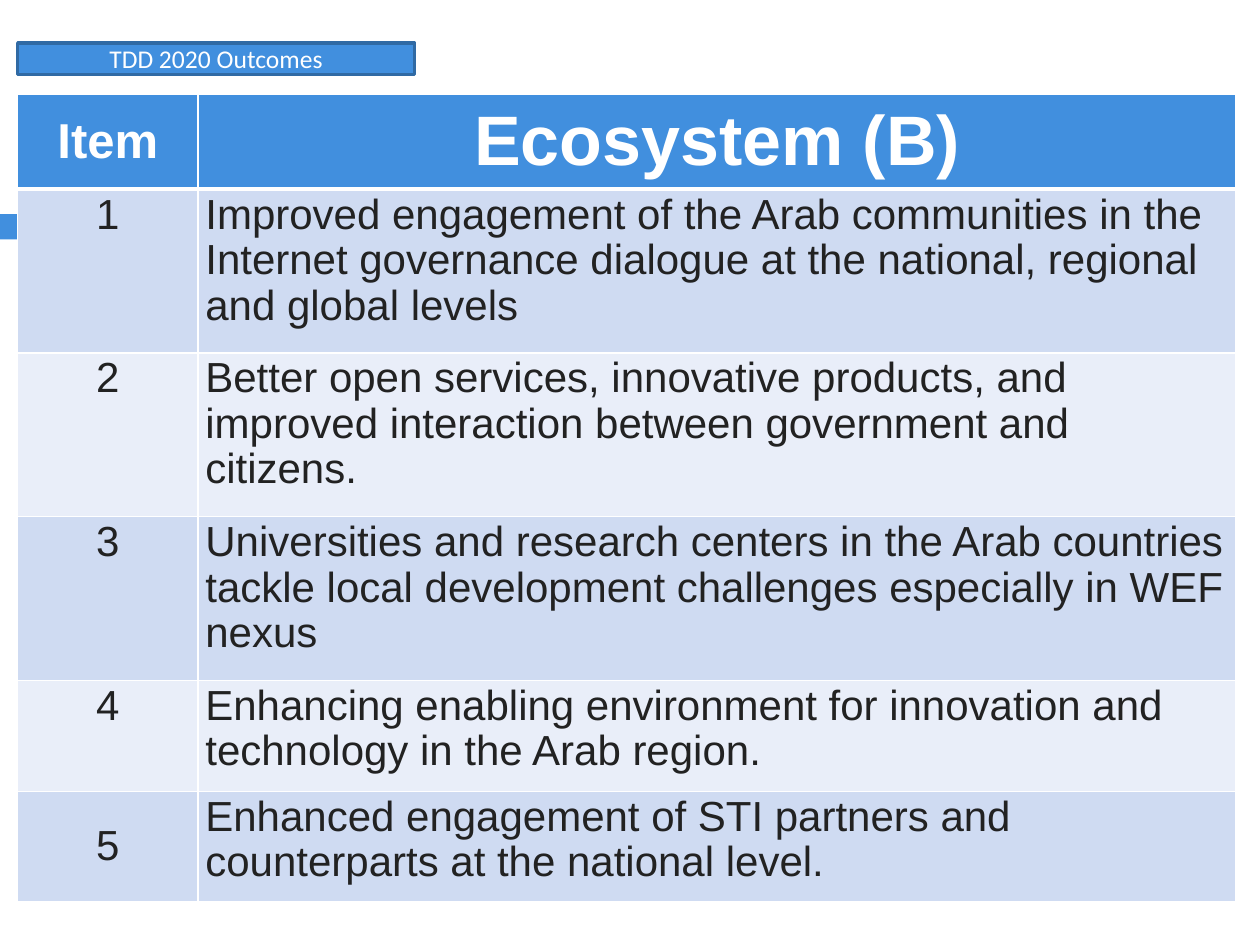
from lxml import etree
from pptx import Presentation
from pptx.dml.color import RGBColor
from pptx.enum.shapes import MSO_SHAPE
from pptx.enum.text import MSO_ANCHOR, PP_ALIGN
from pptx.oxml.ns import qn
from pptx.util import Inches, Pt

RECTANGLE = MSO_SHAPE.RECTANGLE
CENTER, LEFT = PP_ALIGN.CENTER, PP_ALIGN.LEFT
MIDDLE, TOP = MSO_ANCHOR.MIDDLE, MSO_ANCHOR.TOP

BLUE, WHITE, INK = "418FDE", "FFFFFF", "222222"
BANDS = ["CFDBF2", "E9EEF9"]
COLUMN_WIDTHS = [1.43, 8.24]
ROW_HEIGHTS = [0.75, 1.3, 1.3, 1.3, 0.88, 0.88]
OUTCOMES = [
    "Improved engagement of the Arab communities in the Internet governance "
    "dialogue at the national, regional and global levels",
    "Better open services, innovative products, and improved interaction "
    "between government and citizens.",
    "Universities and research centers in the Arab countries tackle local "
    "development challenges especially in WEF nexus",
    "Enhancing enabling environment for innovation and technology in the Arab region.",
    "Enhanced engagement of STI partners and counterparts at the national level.",
]


def paint(color_format, color):
    color_format.rgb = RGBColor.from_string(color)


def add_borders(cell, bottom_width):
    """Give a cell white borders; they must precede its fill in the XML."""
    properties = cell._tc.get_or_add_tcPr()
    widths = {"a:lnL": 1, "a:lnR": 1, "a:lnT": 1, "a:lnB": bottom_width}
    for position, (tag, width) in enumerate(widths.items()):
        line = etree.Element(qn(tag), w=str(Pt(width)))
        fill = etree.SubElement(line, qn("a:solidFill"))
        etree.SubElement(fill, qn("a:srgbClr"), val=WHITE)
        properties.insert(position, line)


deck = Presentation()
deck.slide_width, deck.slide_height = Inches(10), Inches(7.5)
page = deck.slides.add_slide(deck.slide_layouts[6])

# Accent bar and title box
accent_bar = page.shapes.add_shape(
    RECTANGLE, Inches(0), Inches(1.7), Inches(8.23), Inches(0.2))
title_box = page.shapes.add_shape(
    RECTANGLE, Inches(0.14), Inches(0.34), Inches(3.15), Inches(0.25))
for box in (accent_bar, title_box):
    box.shadow.inherit = False
    box.fill.solid()
    paint(box.fill.fore_color, BLUE)
accent_bar.line.fill.background()
paint(title_box.line.color, "306AA4")
title_box.line.width = Pt(2)
title_frame = title_box.text_frame
title_frame.vertical_anchor = MIDDLE
title_frame.margin_top = title_frame.margin_bottom = 0
para = title_frame.paragraphs[0]
para.text = "TDD 2020 Outcomes"
para.alignment = CENTER
para.font.name, para.font.size = "Calibri", Pt(14.6)
paint(para.font.color, WHITE)

# Outcomes table
rows = [("Item", "Ecosystem (B)")]
rows += [(str(number), outcome) for number, outcome in enumerate(OUTCOMES, 1)]
table = page.shapes.add_table(
    len(rows), len(COLUMN_WIDTHS), Inches(0.14), Inches(0.75),
    Inches(sum(COLUMN_WIDTHS)), Inches(sum(ROW_HEIGHTS))).table
for column, width in zip(table.columns, COLUMN_WIDTHS):
    column.width = Inches(width)
for row, height in zip(table.rows, ROW_HEIGHTS):
    row.height = Inches(height)

for row_index, texts in enumerate(rows):
    is_header = row_index == 0
    for column_index, text in enumerate(texts):
        is_item = column_index == 0
        is_last_item = is_item and row_index == len(rows) - 1
        cell = table.cell(row_index, column_index)
        cell.margin_left = cell.margin_right = Inches(0.06)
        cell.margin_top = cell.margin_bottom = Inches(0.03)
        cell.vertical_anchor = MIDDLE if is_header or is_last_item else TOP
        cell.fill.solid()
        paint(cell.fill.fore_color, BLUE if is_header else BANDS[(row_index - 1) % 2])
        add_borders(cell, 3 if is_header else 1)

        para = cell.text_frame.paragraphs[0]
        para.text = text
        para.alignment = CENTER if is_header or is_item else LEFT
        para.font.name = "Arial"
        para.font.bold = is_header
        paint(para.font.color, WHITE if is_header else INK)
        if is_header:
            para.font.size = Pt(28 if is_item else 40)
        else:
            para.font.size = Pt(24)
            para.line_spacing = 0.97

deck.save("out.pptx")
